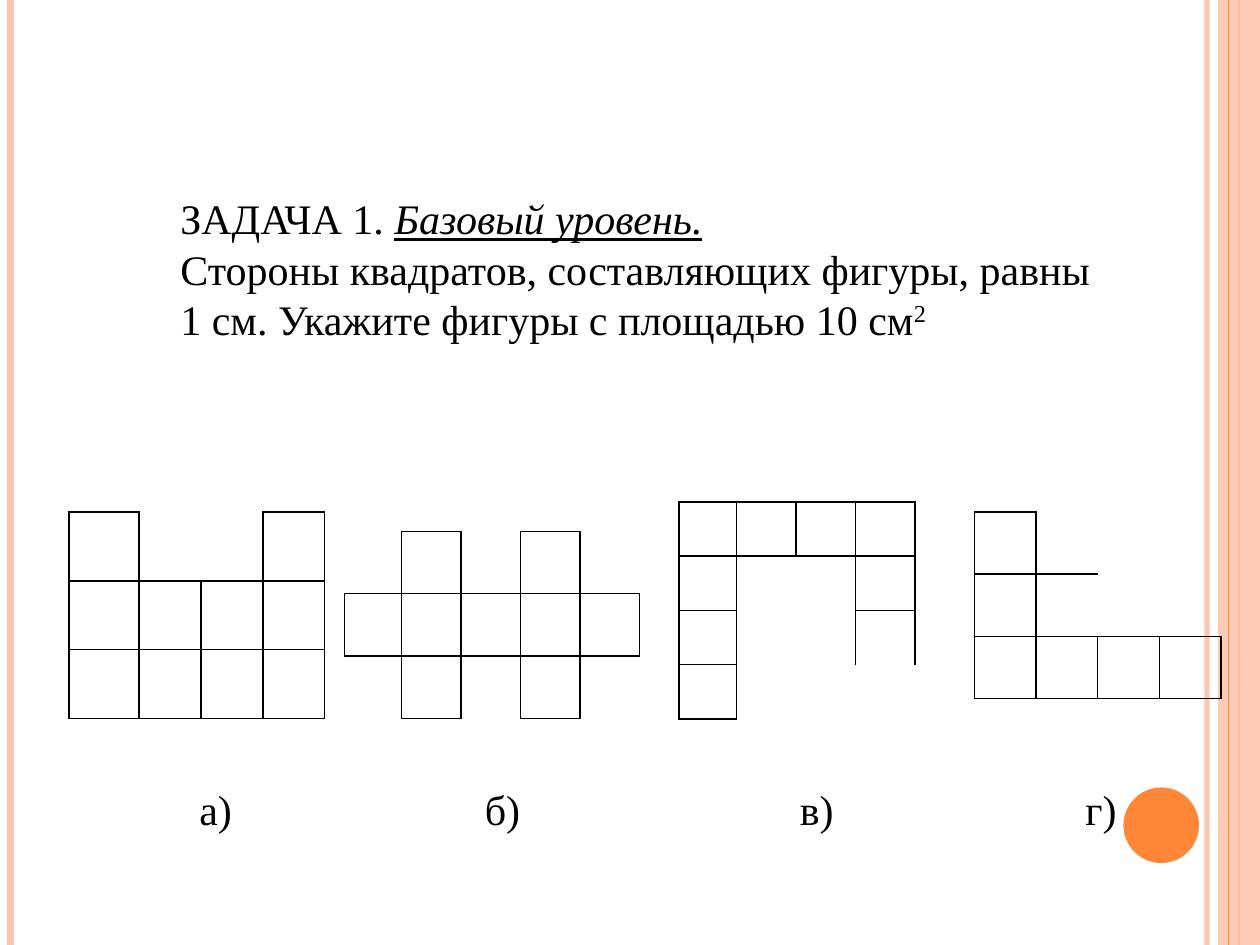
from lxml import etree
from pptx import Presentation
from pptx.dml import color
from pptx.enum import shapes, text
from pptx.oxml import ns
from pptx.util import Pt

FONT = "Times New Roman"


def rgb(value):
    """Return a colour from a hex string."""
    return color.RGBColor.from_string(value)


def set_alpha(sp, percent):
    """Make every colour of a shape partly transparent."""
    for clr in sp._element.spPr.iter(ns.qn("a:srgbClr")):
        etree.SubElement(clr, ns.qn("a:alpha")).set("val", str(percent * 1000))


def add_vertical(s, x, value, width, alpha=100):
    """Draw a line down the whole slide."""
    line = s.shapes.add_connector(
        shapes.MSO_CONNECTOR.STRAIGHT, Pt(x), Pt(0), Pt(x), Pt(540))
    line.line.color.rgb = rgb(value)
    line.line.width = Pt(width)
    if alpha < 100:
        set_alpha(line, alpha)
    etree.SubElement(line._element.spPr, ns.qn("a:effectLst"))


def add_filled(s, kind, box, value, alpha=100):
    """Draw a filled shape without an outline."""
    sp = s.shapes.add_shape(kind, *map(Pt, box))
    sp.shadow.inherit = False
    sp.fill.solid()
    sp.fill.fore_color.rgb = rgb(value)
    sp.line.fill.background()
    if alpha < 100:
        set_alpha(sp, alpha)


def set_border(cell, index, side, visible):
    """Set one border of a cell, either black or absent."""
    ln = etree.Element(ns.qn("a:ln" + side), w=str(Pt(1)))
    if visible:
        fill = etree.SubElement(ln, ns.qn("a:solidFill"))
        etree.SubElement(fill, ns.qn("a:srgbClr"), val="000000")
    else:
        etree.SubElement(ln, ns.qn("a:noFill"))
    cell._tc.get_or_add_tcPr().insert(index, ln)


def figure_edges(pattern):
    """Return the horizontal and vertical edges of the squares marked #."""
    edges = set()
    for r, row in enumerate(pattern):
        for c, mark in enumerate(row):
            if mark == "#":
                edges |= {("h", r, c), ("h", r + 1, c), ("v", r, c), ("v", r, c + 1)}
    return edges


def add_figure(s, left, top, first_width, width, height, pattern, merges=(), flipped=()):
    """Build a figure of squares as a table, switching the flipped edges."""
    rows, cols = len(pattern), len(pattern[0])
    total = first_width + width * (cols - 1)
    frame = s.shapes.add_table(
        rows, cols, Pt(left), Pt(top), Pt(total), Pt(height * rows))
    table = frame.table
    table.first_row = table.horz_banding = False
    for c, column in enumerate(table.columns):
        column.width = Pt(width if c else first_width)
    for row in table.rows:
        row.height = Pt(height)
    for start, end in merges:
        table.cell(*start).merge(table.cell(*end))
    edges = figure_edges(pattern) ^ set(flipped)
    for r in range(rows):
        for c in range(cols):
            cell = table.cell(r, c)
            cell.fill.background()
            sides = {"L": ("v", r, c), "R": ("v", r, c + cell.span_width),
                     "T": ("h", r, c), "B": ("h", r + cell.span_height, c)}
            for index, (side, edge) in enumerate(sides.items()):
                set_border(cell, index, side, edge in edges)


def add_text(s, box, paragraphs, wrap=True):
    """Add a text box and return its text frame."""
    tf = s.shapes.add_textbox(*map(Pt, box)).text_frame
    tf.word_wrap = wrap
    tf.auto_size = text.MSO_AUTO_SIZE.SHAPE_TO_FIT_TEXT
    for i, runs in enumerate(paragraphs):
        p = tf.add_paragraph() if i else tf.paragraphs[0]
        p.text = runs[0]
        for extra in runs[1:]:
            p.add_run().text = extra
        for r in p.runs:
            r.font.name = FONT
            r.font.size = Pt(24)
            r.font.color.rgb = rgb("000000")
    return tf


def add_task(s):
    """Add the wording of the task."""
    tf = add_text(s, (96, 106.6, 568, 94.5), [
        ["ЗАДАЧА 1. ", "Базовый уровень."],
        ["Стороны квадратов, составляющих фигуры, равны \v"
         "1 см. Укажите фигуры с площадью 10 см", "2"]])
    level = tf.paragraphs[0].runs[-1].font
    level.italic = level.underline = True
    tf.paragraphs[1].runs[-1].font._element.set("baseline", "30000")


def add_decoration(s):
    """Add the stripes and the circle of the design."""
    add_vertical(s, 689.8, "FEC3AE", 3, 93)
    add_vertical(s, 6, "FEC3AE", 4.5)
    add_vertical(s, 708, "FE8637", 1.5)
    add_filled(s, shapes.MSO_SHAPE.RECTANGLE, (696, 0, 24, 540), "FEC3AE", 87)
    add_vertical(s, 702, "FE8637", 0.75)
    add_filled(s, shapes.MSO_SHAPE.OVAL, (642, 450, 43.2, 43.2), "FE8637")


def main():
    """Build the slide."""
    prs = Presentation()
    prs.slide_width, prs.slide_height = Pt(720), Pt(540)
    s = prs.slides.add_slide(prs.slide_layouts[6])
    add_decoration(s)
    add_figure(s, 556.9, 292.5, 35.2, 35.2, 35.6, ["#...", "#...", "####"],
               [((0, 2), (1, 2)), ((0, 3), (1, 3))], [("h", 1, 1)])
    add_figure(s, 39.4, 292.5, 40, 35.4, 39.4, ["#..#", "####", "####"],
               [((0, 1), (0, 2))])
    add_figure(s, 196.8, 303.7, 32.6, 34, 35.6, [".#.#.", "#####", ".#.#."])
    add_figure(s, 388, 286.8, 33, 34, 31, ["####", "#..#", "#..#", "#..."],
               [((1, 1), (2, 2)), ((3, 1), (3, 3))], [("h", 3, 3)])
    for label, left, width in [("а)", 106.8, 33), ("б)", 270, 35),
                               ("г)", 613.2, 32.5), ("в)", 450, 34)]:
        add_text(s, (left, 444.4, width, 36), [[label]], wrap=False)
    add_task(s)
    prs.save("out.pptx")


if __name__ == "__main__":
    main()
